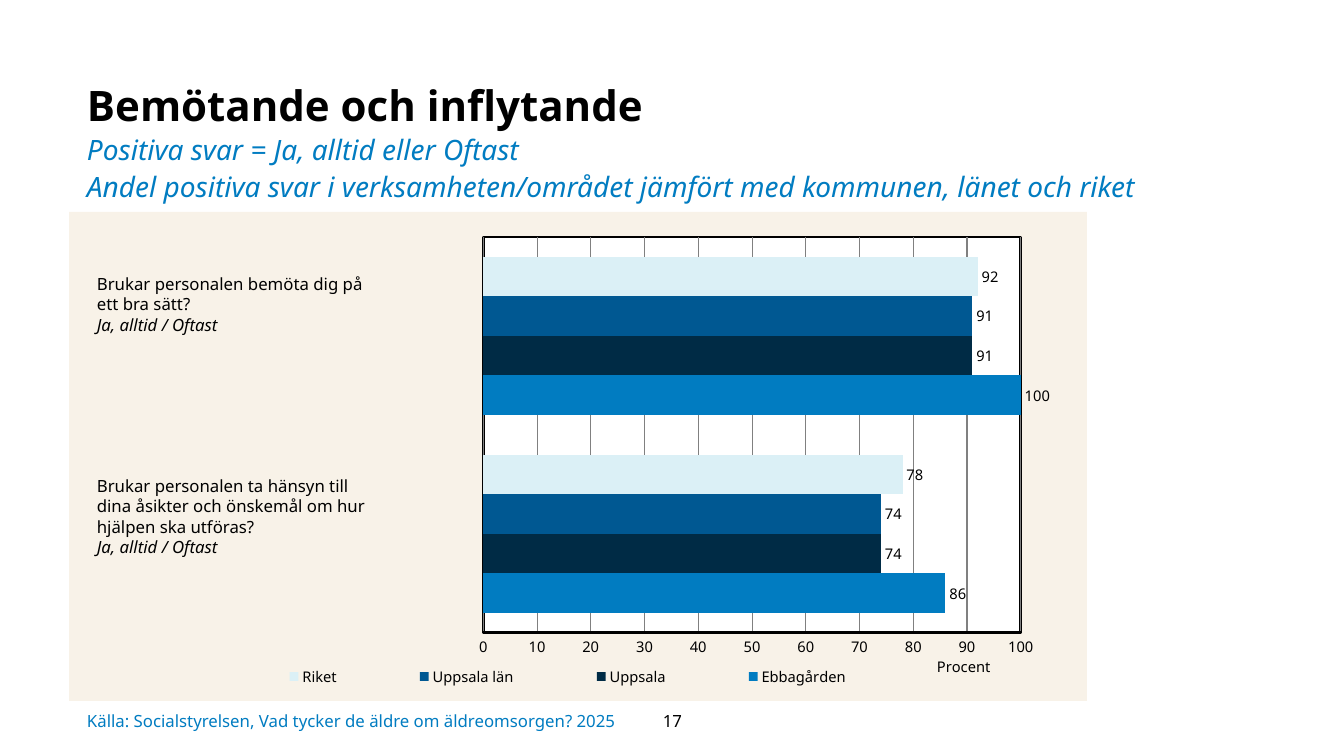
import pptx
import pptx.chart.data
import pptx.dml.color
import pptx.enum.chart
import pptx.enum.text
import pptx.oxml
import pptx.oxml.ns
import pptx.util

FONT = "Noto Sans"
COLORS = {
    "black": "000000", "white": "FFFFFF", "blue": "017CC1", "navy": "002B45",
    "mid": "005892", "pale": "DBF0F6", "sand": "F8F2E8", "grid": "808080",
}
PX = 914400 / 100.8  # EMU per pixel

CATEGORIES = ["1", "2"]
SERIES = [
    ("Ebbagården", (86, 100), "blue"),
    ("Uppsala", (74, 91), "navy"),
    ("Uppsala län", (74, 91), "mid"),
    ("Riket", (78, 92), "pale"),
]
QUESTIONS = [
    (269, 89, "Brukar personalen bemöta dig på ett bra sätt?"),
    (471, 110, "Brukar personalen ta hänsyn till dina åsikter och önskemål om hur "
               "hjälpen ska utföras?"),
]


def px(*lengths):
    return [pptx.util.Emu(round(n * PX)) for n in lengths]


def rgb(name):
    return pptx.dml.color.RGBColor.from_string(COLORS[name])


def style_font(font, size, color="black", **flags):
    values = {"name": FONT, "size": pptx.util.Pt(size), "bold": False, "italic": False}
    for key, value in {**values, **flags}.items():
        setattr(font, key, value)
    font.color.rgb = rgb(color)


def set_frame(tf, margins=None, **values):
    tf.word_wrap = True
    for key, value in values.items():
        setattr(tf, key, value)
    if margins:
        names = ("margin_left", "margin_top", "margin_right", "margin_bottom")
        for name, inches in zip(names, margins):
            setattr(tf, name, pptx.util.Inches(inches))


def add_run(p, text, size, color="black", **flags):
    r = p.add_run()
    r.text = text
    style_font(r.font, size, color, **flags)


def add_title(s, heading, sublines):
    sp = s.shapes.title
    sp.left, sp.top, sp.width, sp.height = px(87, 74, 1117, 123)
    set_frame(sp.text_frame, (0, 0, 0.1, 0.05),
              vertical_anchor=pptx.enum.text.MSO_ANCHOR.TOP,
              auto_size=pptx.enum.text.MSO_AUTO_SIZE.NONE)
    p = sp.text_frame.paragraphs[0]
    p.alignment = pptx.enum.text.PP_ALIGN.LEFT
    p.line_spacing = 1.1
    add_run(p, heading, 30, bold=True)
    for line in sublines:
        p.add_line_break()
        add_run(p, line, 20, "blue", italic=True)


def add_text(s, box, lines, margins=None, align="LEFT", anchor="TOP"):
    tf = s.shapes.add_textbox(*px(*box)).text_frame
    set_frame(tf, margins, vertical_anchor=pptx.enum.text.MSO_ANCHOR[anchor])
    for i, (text, color, flags) in enumerate(lines):
        p = tf.add_paragraph() if i else tf.paragraphs[0]
        p.alignment = pptx.enum.text.PP_ALIGN[align]
        add_run(p, text, 12, color, **flags)


def layout_xml(x, y, w=None, h=None, inner=False):
    target = '<c:layoutTarget val="inner"/>' if inner else ""
    sizes = f'<c:w val="{w}"/><c:h val="{h}"/>' if w else ""
    return pptx.oxml.parse_xml(
        f'<c:layout {pptx.oxml.ns.nsdecls("c")}><c:manualLayout>{target}'
        '<c:xMode val="edge"/><c:yMode val="edge"/>'
        f'<c:x val="{x}"/><c:y val="{y}"/>{sizes}</c:manualLayout></c:layout>')


def place(element, after, layout):
    """Give a chart part a manual layout, right after the named child if any."""
    for old in element.findall(pptx.oxml.ns.qn("c:layout")):
        element.remove(old)
    before = element.find(pptx.oxml.ns.qn(after)) if after else None
    element.insert(0 if before is None else element.index(before) + 1, layout)


def area_xml(fill, line=None, width=0):
    def solid(name):
        return f'<a:solidFill><a:srgbClr val="{COLORS[name]}"/></a:solidFill>'
    outline = solid(line) if line else "<a:noFill/>"
    return pptx.oxml.parse_xml(
        f'<c:spPr {pptx.oxml.ns.nsdecls("c", "a")}>{solid(fill)}'
        f'<a:ln w="{pptx.util.Pt(width)}">{outline}</a:ln></c:spPr>')


def format_axes(chart):
    chart.category_axis.visible = False
    axis = chart.value_axis
    none = pptx.enum.chart.XL_TICK_MARK.NONE
    for key, value in {"minimum_scale": 0, "maximum_scale": 100, "major_unit": 10,
                       "major_tick_mark": none, "minor_tick_mark": none,
                       "has_major_gridlines": True}.items():
        setattr(axis, key, value)
    style_font(axis.tick_labels.font, 10.5)
    for line, color, width in ((axis.format.line, "black", 2),
                               (axis.major_gridlines.format.line, "grid", 0.75)):
        line.color.rgb = rgb(color)
        line.width = pptx.util.Pt(width)
    p = axis.axis_title.text_frame.paragraphs[0]
    add_run(p, "Procent", 10.5)
    place(axis.axis_title._element, "c:tx", layout_xml(0.85, 0.9))


def add_bar_chart(s):
    data = pptx.chart.data.CategoryChartData()
    data.categories = CATEGORIES
    for name, values, _ in SERIES:
        data.add_series(name, values)
    chart = s.shapes.add_chart(pptx.enum.chart.XL_CHART_TYPE.BAR_CLUSTERED,
                               *px(69, 212, 1018, 489), data).chart
    style_font(chart.font, 10.5)
    chart.has_title = False
    format_axes(chart)

    # Bars and value labels
    plot = chart.plots[0]
    plot.gap_width, plot.overlap, plot.vary_by_categories = 100, 0, False
    for series, (_, _, color) in zip(plot.series, SERIES):
        series.format.fill.solid()
        series.format.fill.fore_color.rgb = rgb(color)
        labels = series.data_labels
        labels.show_value = True
        labels.position = pptx.enum.chart.XL_LABEL_POSITION.OUTSIDE_END
        style_font(labels.font, 10.5)

    # Legend
    chart.has_legend = True
    chart.legend.position = pptx.enum.chart.XL_LEGEND_POSITION.BOTTOM
    chart.legend.include_in_layout = False
    style_font(chart.legend.font, 10.5)
    place(chart.legend._element, "c:legendPos", layout_xml(0.14, 0.92, 0.7, 0.06))

    # Plot area and chart background
    space = chart._chartSpace
    plot_area = space.chart.plotArea
    place(plot_area, None, layout_xml(0.407, 0.051, 0.528, 0.81, inner=True))
    plot_area.append(area_xml("white", "black", 2))
    space.chart.addnext(area_xml("sand"))


def main():
    prs = pptx.Presentation()
    prs.slide_width, prs.slide_height = px(1344, 756)
    s = prs.slides.add_slide(prs.slide_layouts[5])

    add_title(s, "Bemötande och inflytande", [
        "Positiva svar = Ja, alltid eller Oftast",
        "Andel positiva svar i verksamheten/området jämfört med kommunen, länet och riket",
    ])
    add_bar_chart(s)

    # Questions beside the bars
    for top, height, question in QUESTIONS:
        add_text(s, (87, top, 299, height), [
            (question, "black", {}),
            ("Ja, alltid / Oftast", "black", {"italic": True}),
        ])

    # Footer
    source = "Källa: Socialstyrelsen, Vad tycker de äldre om äldreomsorgen? 2025"
    add_text(s, (87, 701, 907, 40), [(source, "blue", {})], (0, 0, 0, 0), anchor="MIDDLE")
    add_text(s, (621, 701, 103, 40), [("17", "black", {})], align="CENTER", anchor="MIDDLE")

    prs.save("out.pptx")


if __name__ == "__main__":
    main()
